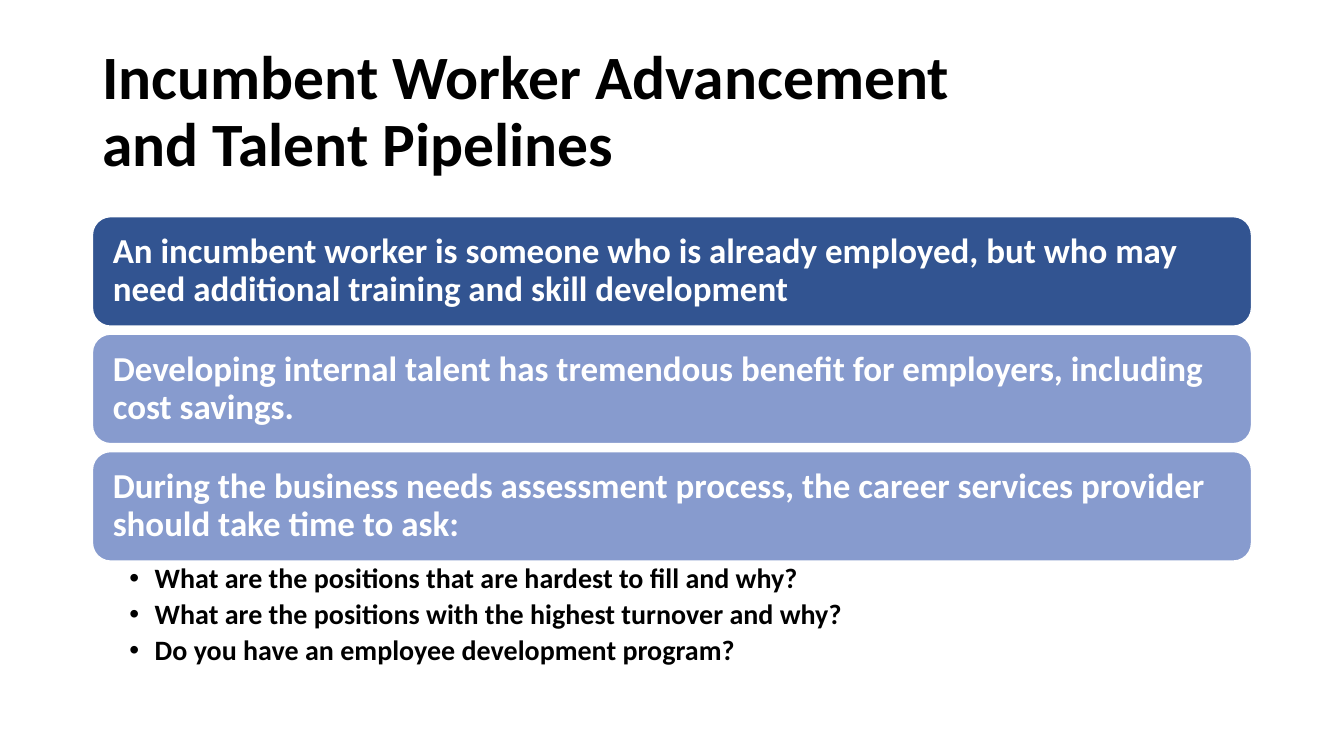
from dataclasses import dataclass

from lxml import etree
from pptx import Presentation
from pptx.dml.color import RGBColor
from pptx.enum import shapes, text
from pptx.oxml import ns
from pptx.util import Cm, Pt


@dataclass(frozen=True)
class Theme:
    font: str = "Calibri"
    ink: str = "000000"
    paper: str = "FFFFFF"
    lead: str = "325491"
    soft: str = "879BCE"
    head: int = 44
    band: int = 25
    item: int = 20


THEME = Theme()

TITLE = "Incumbent Worker Advancement\vand Talent Pipelines"
BANDS = [
    ("An incumbent worker is someone who is already employed, but who may "
     "need additional training and skill development", THEME.lead),
    ("Developing internal talent has tremendous benefit for employers, "
     "including cost savings.", THEME.soft),
    ("During the business needs assessment process, the career services "
     "provider should take time to ask:", THEME.soft),
]
ASKS = [
    "What are the positions that are hardest to fill and why?",
    "What are the positions with the highest turnover and why?",
    "Do you have an employee development program?",
]


def color(code):
    return RGBColor.from_string(code)


def style(para, size, code, after=0):
    para.alignment = text.PP_ALIGN.LEFT
    para.line_spacing = 0.9
    para.space_before = Pt(0)
    para.space_after = Pt(after)
    for run in para.runs:
        font = run.font
        font.name = THEME.font
        font.size = Pt(size)
        font.bold = True
        font.color.rgb = color(code)


def inset(frame, left, top, right, bottom):
    frame.word_wrap = True
    frame.auto_size = text.MSO_AUTO_SIZE.NONE
    frame.margin_left, frame.margin_right = Cm(left), Cm(right)
    frame.margin_top, frame.margin_bottom = Cm(top), Cm(bottom)


def bullet(para):
    props = para._p.get_or_add_pPr()
    props.set("marL", str(Cm(0.64)))
    props.set("indent", str(-Cm(0.64)))
    etree.SubElement(props, ns.qn("a:buFont")).set("typeface", "Arial")
    etree.SubElement(props, ns.qn("a:buChar")).set("char", "•")


def add_title(slide, left, top, width, height):
    title = slide.shapes.title
    title.left, title.top = Cm(left), Cm(top)
    title.width, title.height = Cm(width), Cm(height)
    frame = title.text_frame
    inset(frame, 0.25, 0.13, 0.25, 0.13)
    frame.vertical_anchor = text.MSO_ANCHOR.MIDDLE
    frame.text = TITLE
    style(frame.paragraphs[0], THEME.head, THEME.ink)


def add_bands(slide, left, top, width, height, gap=0.2):
    """Stack the statements in equal rounded bands that fill the box."""
    count = len(BANDS)
    tall = (height - gap * (count - 1)) / count
    for row, (words, fill) in enumerate(BANDS):
        band = slide.shapes.add_shape(
            shapes.MSO_SHAPE.ROUNDED_RECTANGLE,
            Cm(left), Cm(top + row * (tall + gap)), Cm(width), Cm(tall))
        band.shadow.inherit = False
        band.fill.solid()
        band.fill.fore_color.rgb = color(fill)
        band.line.color.rgb = color(THEME.paper)
        band.line.width = Pt(1)
        frame = band.text_frame
        inset(frame, 0.38, 0.38, 0.38, 0.38)
        frame.vertical_anchor = text.MSO_ANCHOR.MIDDLE
        frame.text = words
        style(frame.paragraphs[0], THEME.band, THEME.paper)


def add_asks(slide, left, top, width, height):
    box = slide.shapes.add_textbox(Cm(left), Cm(top), Cm(width), Cm(height))
    frame = box.text_frame
    inset(frame, 0.93, 0.08, 0.48, 0.08)
    frame.text = "\n".join(ASKS)
    for para in frame.paragraphs:
        para.level = 1
        style(para, THEME.item, THEME.ink, after=4)
        bullet(para)


def main():
    deck = Presentation()
    deck.slide_width, deck.slide_height = Cm(33.87), Cm(19.05)
    slide = deck.slides.add_slide(deck.slide_layouts[5])
    left, width = 2.33, 29.21
    add_title(slide, left, 1.01, width, 3.68)
    add_bands(slide, left, 5.46, width, 8.68)
    add_asks(slide, left, 14.14, width, 2.87)
    deck.save("out.pptx")


if __name__ == "__main__":
    main()
